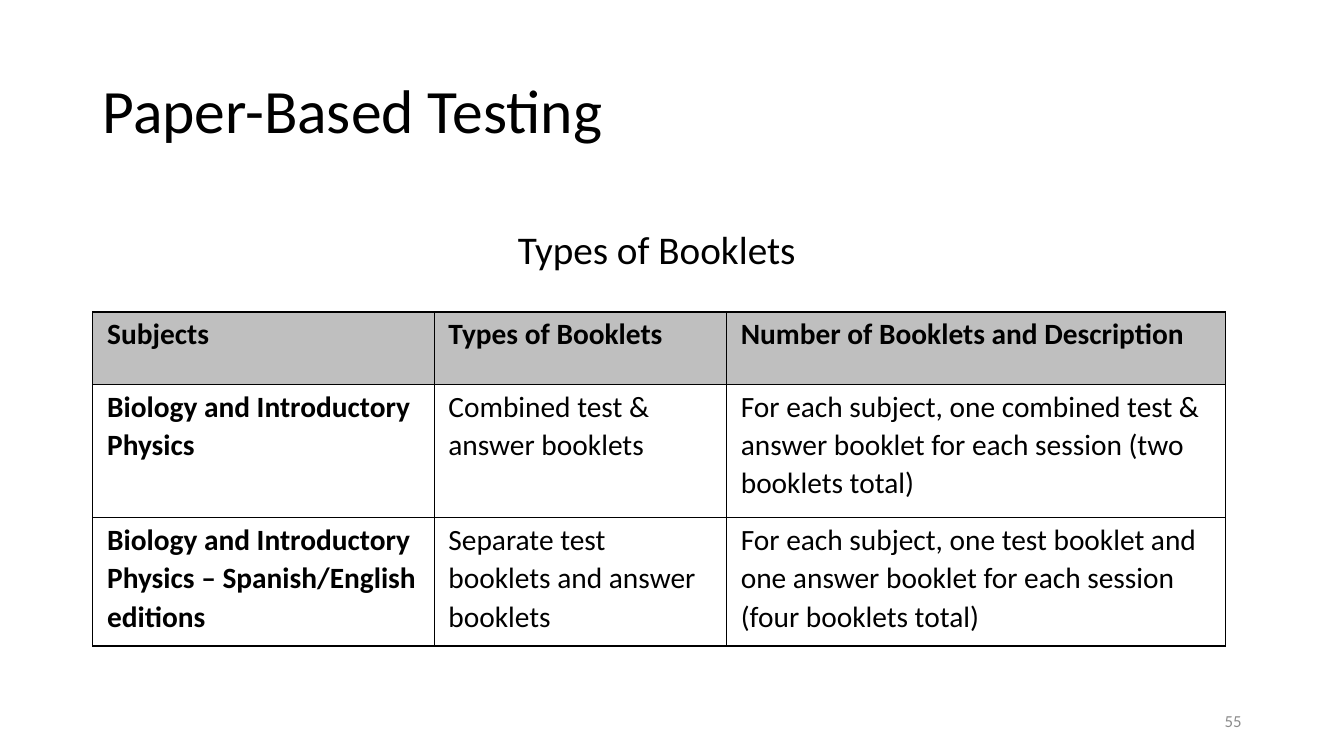
from dataclasses import dataclass

import pptx
import pptx.dml.color
import pptx.enum.text
import pptx.oxml
import pptx.oxml.ns
import pptx.shapes.base
import pptx.slide
import pptx.table
import pptx.text.text
import pptx.util

Cm = pptx.util.Cm
Pt = pptx.util.Pt
ALIGN = pptx.enum.text.PP_ALIGN
ANCHOR = pptx.enum.text.MSO_ANCHOR

FONT = "Calibri"
BLACK = "000000"
GREY = "8C8C8C"
HEADER_FILL = "BFBFBF"


@dataclass
class Label:
    text: str
    left: float
    top: float
    width: float
    height: float
    size: float
    color: str = BLACK
    align: ALIGN = ALIGN.LEFT
    anchor: ANCHOR = ANCHOR.MIDDLE
    wrap: bool = True
    spacing: float = 1.0


@dataclass
class Row:
    height: float
    cells: tuple[str, str, str]
    header: bool = False


TITLE = Label("Paper-Based Testing", 2.33, 1.01, 29.21, 3.68, 44, spacing=0.9)
CAPTION = Label("Types of Booklets", 12.8, 5.56, 7.6, 1.45, 28,
                anchor=ANCHOR.TOP, wrap=False)
PAGE_NUMBER = Label("55", 23.92, 17.66, 7.62, 1.01, 12, GREY, ALIGN.RIGHT)

COLUMN_WIDTHS = (8.6, 7.37, 12.57)
ROWS = (
    Row(1.83, ("Subjects", "Types of Booklets",
               "Number of Booklets and Description"), header=True),
    Row(3.36, ("Biology and Introductory Physics",
               "Combined test & answer booklets",
               "For each subject, one combined test & answer booklet "
               "for each session (two booklets total)")),
    Row(3.23, ("Biology and Introductory Physics – Spanish/English editions",
               "Separate test booklets and answer booklets",
               "For each subject, one test booklet and one answer booklet "
               "for each session (four booklets total)")),
)


def rgb(color: str) -> pptx.dml.color.RGBColor:
    return pptx.dml.color.RGBColor.from_string(color)


def format_text(tf: pptx.text.text.TextFrame, size: float, color: str,
                spacing: float, bold: bool = False,
                align: ALIGN = ALIGN.LEFT) -> None:
    for p in tf.paragraphs:
        p.alignment = align
        p.line_spacing = spacing
        for r in p.runs:
            r.font.name = FONT
            r.font.size = Pt(size)
            r.font.bold = bold
            r.font.color.rgb = rgb(color)


def fill_label(sp: pptx.shapes.base.BaseShape, label: Label) -> None:
    sp.left, sp.top = Cm(label.left), Cm(label.top)
    sp.width, sp.height = Cm(label.width), Cm(label.height)
    tf = sp.text_frame
    tf.text = label.text
    tf.word_wrap = label.wrap
    tf.auto_size = pptx.enum.text.MSO_AUTO_SIZE.NONE
    tf.vertical_anchor = label.anchor
    format_text(tf, label.size, label.color, label.spacing, align=label.align)


def add_label(s: pptx.slide.Slide, label: Label) -> None:
    fill_label(s.shapes.add_textbox(0, 0, 0, 0), label)


def add_borders(cell: pptx.table._Cell) -> None:
    tc_pr = cell._tc.get_or_add_tcPr()
    for side in ("lnL", "lnR", "lnT", "lnB"):
        tc_pr.append(pptx.oxml.parse_xml(
            f'<a:{side} {pptx.oxml.ns.nsdecls("a")} w="{Pt(1)}"><a:solidFill>'
            f'<a:srgbClr val="{BLACK}"/></a:solidFill></a:{side}>'))


def fill_cell(cell: pptx.table._Cell, text: str, header: bool, bold: bool) -> None:
    cell.margin_left = cell.margin_right = Cm(0.36)
    cell.margin_top, cell.margin_bottom = Cm(0.05), Cm(0)
    add_borders(cell)
    if header:
        cell.fill.solid()
        cell.fill.fore_color.rgb = rgb(HEADER_FILL)
    else:
        cell.fill.background()
    cell.text_frame.text = text
    format_text(cell.text_frame, 21, BLACK, 1.07, bold)


def add_booklet_table(s: pptx.slide.Slide) -> None:
    table = s.shapes.add_table(
        len(ROWS), len(COLUMN_WIDTHS), Cm(2.34), Cm(7.86),
        Cm(sum(COLUMN_WIDTHS)), Cm(sum(row.height for row in ROWS))).table
    table.first_row = table.horz_banding = False
    for column, width in zip(table.columns, COLUMN_WIDTHS):
        column.width = Cm(width)
    for i, row in enumerate(ROWS):
        table.rows[i].height = Cm(row.height)
        for j, text in enumerate(row.cells):
            fill_cell(table.cell(i, j), text, row.header, row.header or j == 0)


def main() -> None:
    prs = pptx.Presentation()
    prs.slide_width, prs.slide_height = Cm(33.87), Cm(19.05)
    s = prs.slides.add_slide(prs.slide_layouts.get_by_name("Title Only"))
    fill_label(s.shapes.title, TITLE)
    add_label(s, PAGE_NUMBER)
    add_booklet_table(s)
    add_label(s, CAPTION)
    prs.save("out.pptx")


if __name__ == "__main__":
    main()
